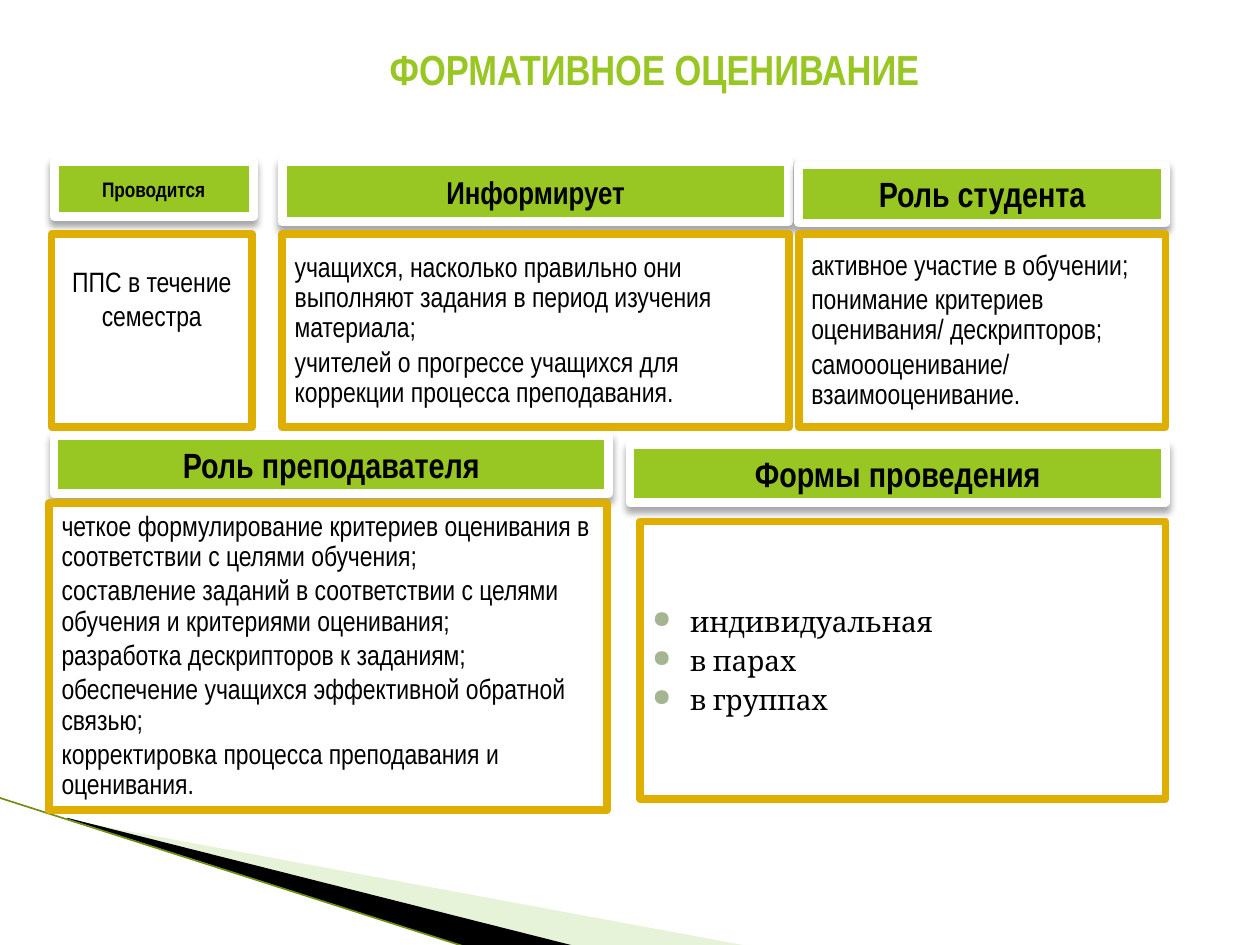
from dataclasses import dataclass

from lxml.etree import SubElement
from pptx import Presentation
from pptx.dml.color import RGBColor
from pptx.enum.shapes import MSO_CONNECTOR, MSO_SHAPE
from pptx.enum.text import MSO_ANCHOR, PP_ALIGN
from pptx.oxml.ns import qn
from pptx.util import Inches, Pt

COLORS = {
    "green": "98C723",
    "gold": "DEAE00",
    "white": "FFFFFF",
    "black": "000000",
    "pale": "C5E19F",
    "edge": "6F8F14",
    "bullet": "A5B592",
}
NARROW = "Arial Narrow"
SERIF = "Cambria"


@dataclass
class Box:
    left: float
    top: float
    width: float
    height: float


@dataclass
class Heading:
    box: Box
    text: str
    size: int = 20


@dataclass
class Body:
    box: Box
    lines: list[str]
    style: str = "list"


HEADINGS = [
    Heading(Box(0.43, 1.28, 1.58, 0.44), "Проводится", 12),
    Heading(Box(2.24, 1.28, 4.02, 0.48), "Информирует", 18),
    Heading(Box(6.34, 1.31, 2.91, 0.46), "Роль студента"),
    Heading(Box(0.43, 3.46, 4.4, 0.46), "Роль преподавателя"),
    Heading(Box(5, 3.53, 4.25, 0.46), "Формы проведения"),
]
BODIES = [
    Body(Box(0.41, 1.86, 1.59, 1.53), ["ППС в течение семестра"], "centered"),
    Body(Box(2.24, 1.86, 4.02, 1.53), [
        "учащихся, насколько правильно они выполняют задания в период изучения материала;",
        "учителей о прогрессе учащихся для коррекции процесса преподавания.",
    ]),
    Body(Box(6.34, 1.86, 2.91, 1.53), [
        "активное участие в обучении;",
        "понимание критериев оценивания/ дескрипторов;",
        "самоооценивание/ взаимооценивание.",
    ]),
    Body(Box(0.39, 3.99, 4.43, 2.44), [
        "четкое формулирование критериев оценивания в соответствии с целями обучения;",
        "составление заданий в соответствии с целями обучения и критериями оценивания;",
        "разработка дескрипторов к заданиям;",
        "обеспечение учащихся эффективной обратной связью;",
        "корректировка процесса преподавания и оценивания.",
    ]),
    Body(Box(5.08, 4.14, 4.17, 2.2), ["индивидуальная", "в парах", "в группах"], "bullets"),
]


def rgb(name: str) -> RGBColor:
    return RGBColor.from_string(COLORS[name])


def set_font(paragraph, size: int, face: str = NARROW, color: str = "black", bold: bool = False) -> None:
    font = paragraph.font
    font.size, font.name, font.bold = Pt(size), face, bold
    font.color.rgb = rgb(color)


def add_alpha(color_element, percent: int) -> None:
    SubElement(color_element, qn("a:alpha"), val=str(percent * 1000))


def add_wedge(slide, points: list[tuple[float, float]], color: str, opacity: int = 100) -> None:
    corners = [(Inches(x), Inches(y)) for x, y in points]
    builder = slide.shapes.build_freeform(*corners[0])
    builder.add_line_segments(corners[1:], close=True)
    wedge = builder.convert_to_shape()
    wedge.shadow.inherit = False
    wedge.fill.solid()
    wedge.fill.fore_color.rgb = rgb(color)
    wedge.line.fill.background()
    if opacity < 100:
        add_alpha(wedge._element.spPr.find(qn("a:solidFill"))[0], opacity)


def add_edge(slide) -> None:
    edge = slide.shapes.add_connector(
        MSO_CONNECTOR.STRAIGHT, Inches(-0.01), Inches(6.33), Inches(3.71), Inches(7.52))
    edge.line.color.rgb = rgb("edge")
    edge.line.width = Pt(0.95)
    SubElement(edge._element.spPr, qn("a:effectLst"))


def add_panel(slide, box: Box, fill: str, outline: str, weight: float):
    panel = slide.shapes.add_shape(
        MSO_SHAPE.RECTANGLE, Inches(box.left), Inches(box.top), Inches(box.width), Inches(box.height))
    panel.shadow.inherit = False
    panel.fill.solid()
    panel.fill.fore_color.rgb = rgb(fill)
    panel.line.color.rgb = rgb(outline)
    panel.line.width = Pt(weight)
    panel.text_frame.word_wrap = True
    panel.text_frame.vertical_anchor = MSO_ANCHOR.MIDDLE
    return panel


def add_heading(slide, heading: Heading) -> None:
    panel = add_panel(slide, heading.box, "green", "white", 5)
    effects = panel._element.spPr.find(qn("a:effectLst"))
    shadow = SubElement(effects, qn("a:outerShdw"), blurRad=str(Pt(4)), dist=str(Pt(3)),
                        dir="5400000", rotWithShape="0")
    add_alpha(SubElement(shadow, qn("a:srgbClr"), val=COLORS["black"]), 35)
    paragraph = panel.text_frame.paragraphs[0]
    paragraph.text = heading.text
    paragraph.alignment = PP_ALIGN.CENTER
    set_font(paragraph, heading.size, bold=True)


def add_bullet(paragraph) -> None:
    properties = paragraph._p.get_or_add_pPr()
    properties.set("marL", str(Inches(0.3)))
    properties.set("indent", str(Inches(-0.3)))
    color = SubElement(properties, qn("a:buClr"))
    SubElement(color, qn("a:srgbClr"), val=COLORS["bullet"])
    SubElement(properties, qn("a:buSzPct"), val="85000")
    SubElement(properties, qn("a:buChar"), char="●")


def add_body(slide, body: Body) -> None:
    frame = add_panel(slide, body.box, "white", "gold", 4.33).text_frame
    if body.style == "centered":
        frame.vertical_anchor = MSO_ANCHOR.TOP
        frame.margin_top = Inches(0.24)
    for index, line in enumerate(body.lines):
        paragraph = frame.add_paragraph() if index else frame.paragraphs[0]
        paragraph.text = line
        paragraph.alignment = PP_ALIGN.CENTER if body.style == "centered" else PP_ALIGN.LEFT
        if body.style == "list":
            paragraph.line_spacing = 0.9
            paragraph.space_after = Pt(2.4)
        elif body.style == "bullets":
            if index:
                paragraph.space_before = Pt(3.2)
            add_bullet(paragraph)
        set_font(paragraph, 16, SERIF if body.style == "bullets" else NARROW)


def add_title(slide) -> None:
    title = slide.shapes.title
    title.left, title.top = Inches(1.21), Inches(0.13)
    title.width, title.height = Inches(7.97), Inches(0.83)
    title.text_frame.vertical_anchor = MSO_ANCHOR.MIDDLE
    paragraph = title.text_frame.paragraphs[0]
    paragraph.text = "ФОРМАТИВНОЕ ОЦЕНИВАНИЕ"
    paragraph.alignment = PP_ALIGN.CENTER
    set_font(paragraph, 24, color="green", bold=True)


def main() -> None:
    presentation = Presentation()
    presentation.slide_width, presentation.slide_height = Inches(10), Inches(7.5)
    slide = presentation.slides.add_slide(presentation.slide_layouts[5])
    add_wedge(slide, [(0.55, 6.51), (5.95, 7.51), (4.56, 7.51), (0.55, 6.5)], "pale", 40)
    add_wedge(slide, [(0.53, 6.49), (4.57, 7.51), (3.72, 7.52), (0.54, 6.5)], "black")
    add_edge(slide)
    add_title(slide)
    for heading in HEADINGS:
        add_heading(slide, heading)
    for body in BODIES:
        add_body(slide, body)
    presentation.save("out.pptx")


if __name__ == "__main__":
    main()
